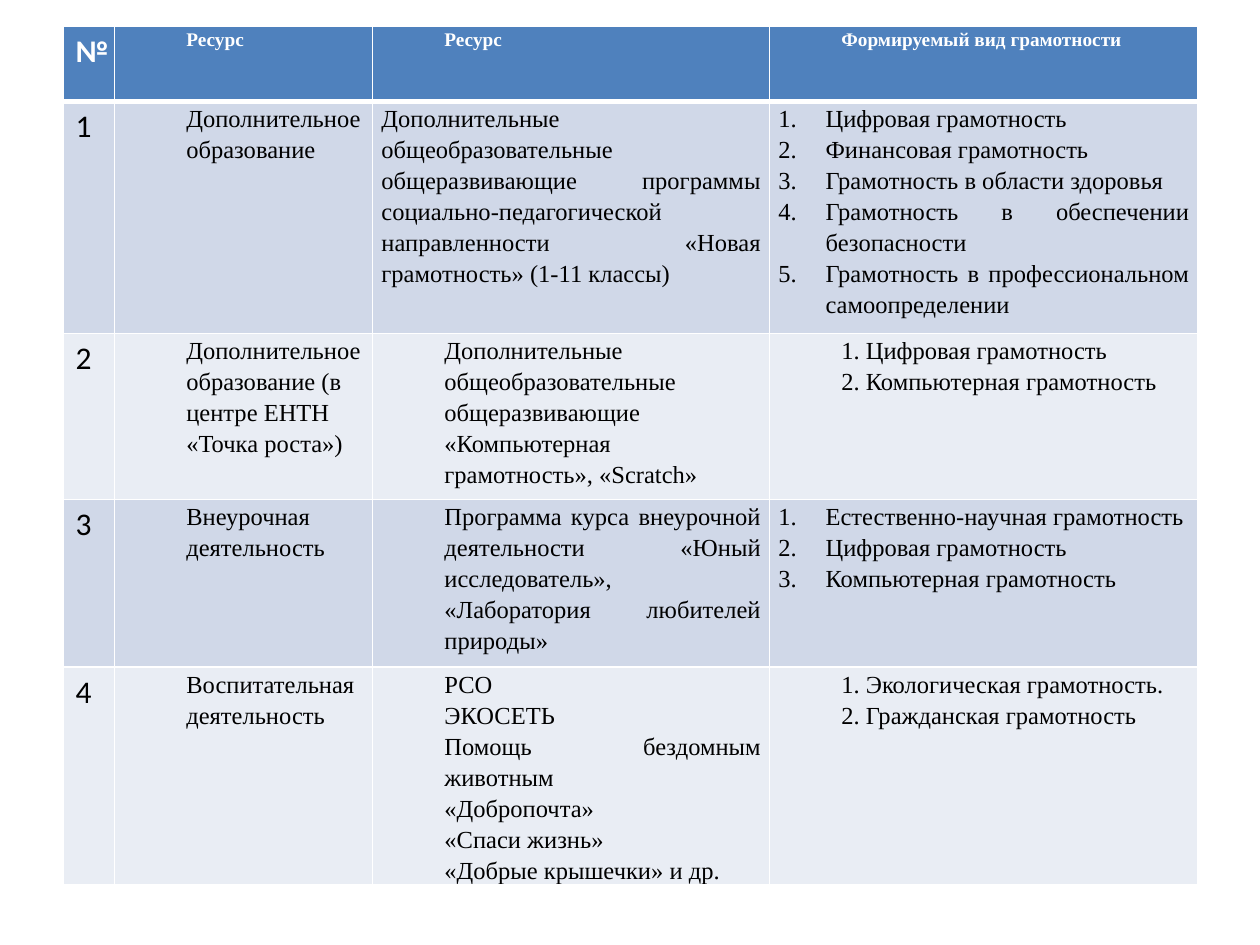
from lxml.etree import SubElement
from pptx import Presentation
from pptx.dml.color import RGBColor
from pptx.enum.text import PP_ALIGN
from pptx.oxml.ns import qn
from pptx.util import Pt

WHITE = RGBColor(0xFF, 0xFF, 0xFF)
BLACK = RGBColor(0x00, 0x00, 0x00)
BLUE = RGBColor(0x4F, 0x81, 0xBD)
BAND_DARK = RGBColor(0xD0, 0xD8, 0xE8)
BAND_LIGHT = RGBColor(0xE9, 0xED, 0xF4)

COL_WIDTHS = (29.5, 147.5, 226.8, 244.8)
ROW_HEIGHTS = (43, 132.5, 95, 95.8, 124)

# Paragraph styles: alignment, left margin in points, automatic numbering
LEFT = (PP_ALIGN.LEFT, 36, False)
JUSTIFIED = (PP_ALIGN.JUSTIFY, 36, False)
FLUSH = (PP_ALIGN.JUSTIFY, 0, False)
NUMBERED = (PP_ALIGN.JUSTIFY, 27, True)

HEADINGS = ("Ресурс", "Ресурс", "Формируемый вид грамотности")
ROWS = (
    (
        (LEFT, ["Дополнительное образование"]),
        (FLUSH, ["Дополнительные общеобразовательные общеразвивающие программы "
                 "социально-педагогической направленности «Новая грамотность» "
                 "(1-11 классы)"]),
        (NUMBERED, ["Цифровая грамотность",
                    "Финансовая грамотность",
                    "Грамотность в области здоровья",
                    "Грамотность в обеспечении безопасности",
                    "Грамотность в профессиональном самоопределении"]),
    ),
    (
        (LEFT, ["Дополнительное образование (в центре ЕНТН «Точка роста»)"]),
        (LEFT, ["Дополнительные общеобразовательные общеразвивающие "
                "«Компьютерная грамотность», «Scratch»"]),
        (JUSTIFIED, ["1. Цифровая грамотность", "2. Компьютерная грамотность"]),
    ),
    (
        (JUSTIFIED, ["Внеурочная деятельность"]),
        (JUSTIFIED, ["Программа курса внеурочной деятельности «Юный исследователь», "
                     "«Лаборатория любителей природы»"]),
        (NUMBERED, ["Естественно-научная грамотность",
                    "Цифровая грамотность",
                    "Компьютерная грамотность"]),
    ),
    (
        (JUSTIFIED, ["Воспитательная деятельность"]),
        (JUSTIFIED, ["РСО",
                     "ЭКОСЕТЬ",
                     "Помощь бездомным животным",
                     "«Добропочта»",
                     "«Спаси жизнь»",
                     "«Добрые крышечки» и др."]),
        (JUSTIFIED, ["1. Экологическая грамотность.", "2. Гражданская грамотность"]),
    ),
)


def set_borders(cell, top=1, bottom=1):
    """Draw white borders; top and bottom are widths in points."""
    tcPr = cell._tc.get_or_add_tcPr()
    for side, width in (("L", 1), ("R", 1), ("T", top), ("B", bottom)):
        ln = SubElement(tcPr, qn(f"a:ln{side}"), w=str(Pt(width)))
        fill = SubElement(ln, qn("a:solidFill"))
        SubElement(fill, qn("a:srgbClr"), val=str(WHITE))


def add_run(p, text, font, size, color, bold):
    r = p.add_run()
    r.text = text
    r.font.name = font
    r.font.size = Pt(size)
    r.font.color.rgb = color
    r.font.bold = bold


def fill_text_cell(cell, style, texts, size, color, bold=False):
    align, margin, numbered = style
    cell.margin_left = cell.margin_right = Pt(5)
    cell.margin_top = cell.margin_bottom = Pt(0)
    tf = cell.text_frame
    for i, text in enumerate(texts):
        p = tf.add_paragraph() if i else tf.paragraphs[0]
        pPr = p._p.get_or_add_pPr()
        pPr.set("marL", str(Pt(margin)))
        pPr.set("indent", str(Pt(-margin if numbered else 0)))
        if numbered:
            SubElement(pPr, qn("a:buFont"), typeface="+mj-lt")
            SubElement(pPr, qn("a:buAutoNum"), type="arabicPeriod")
        p.alignment = align
        p.line_spacing = 1.15
        add_run(p, text, "Times New Roman", size, color, bold)


def fill_number_cell(cell, text, color, bold=False):
    add_run(cell.text_frame.paragraphs[0], text, "Calibri", 18, color, bold)


def add_resource_table(slide):
    frame = slide.shapes.add_table(
        len(ROW_HEIGHTS), len(COL_WIDTHS), Pt(36), Pt(15),
        Pt(sum(COL_WIDTHS)), Pt(sum(ROW_HEIGHTS)))
    table = frame.table
    for column, width in zip(table.columns, COL_WIDTHS):
        column.width = Pt(width)
    for row, height in zip(table.rows, ROW_HEIGHTS):
        row.height = Pt(height)
    return table


def format_cells(table):
    for i, row in enumerate(table.rows):
        color = BLUE if i == 0 else BAND_DARK if i % 2 else BAND_LIGHT
        for cell in row.cells:
            set_borders(cell, top=3 if i == 1 else 1, bottom=3 if i == 0 else 1)
            cell.fill.solid()
            cell.fill.fore_color.rgb = color


def fill_table(table):
    fill_number_cell(table.cell(0, 0), "№", WHITE, bold=True)
    for col, heading in enumerate(HEADINGS, 1):
        fill_text_cell(table.cell(0, col), JUSTIFIED, [heading], 11, WHITE, bold=True)
    for i, row in enumerate(ROWS, 1):
        fill_number_cell(table.cell(i, 0), str(i), BLACK)
        for col, (style, texts) in enumerate(row, 1):
            fill_text_cell(table.cell(i, col), style, texts, 14, BLACK)


def main():
    prs = Presentation()
    prs.slide_width, prs.slide_height = Pt(720), Pt(540)
    slide = prs.slides.add_slide(prs.slide_layouts[6])
    table = add_resource_table(slide)
    format_cells(table)
    fill_table(table)
    prs.save("out.pptx")


if __name__ == "__main__":
    main()
